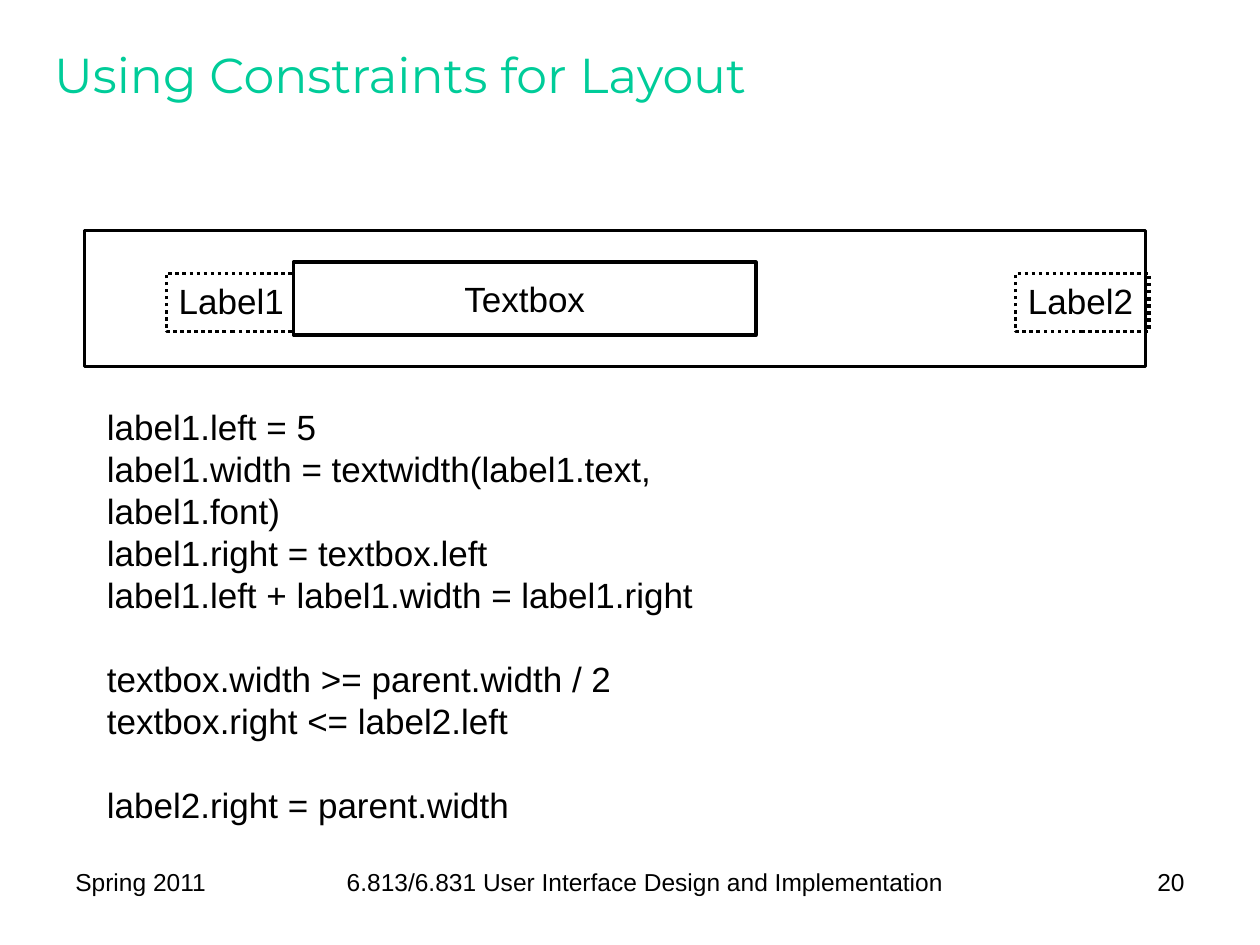
from dataclasses import dataclass

from pptx import Presentation
from pptx.dml.color import RGBColor
from pptx.enum.dml import MSO_LINE
from pptx.enum.shapes import MSO_SHAPE
from pptx.enum.text import MSO_ANCHOR, PP_ALIGN
from pptx.util import Inches, Pt


@dataclass(frozen=True)
class Theme:
    """Colours, fonts and type sizes of the deck."""
    ink: RGBColor = RGBColor(0, 0, 0)
    paper: RGBColor = RGBColor(255, 255, 255)
    accent: RGBColor = RGBColor(0, 204, 153)
    title_font: str = "Montserrat"
    body_font: str = "Arial"
    title_size: int = 28
    body_size: int = 20
    footer_size: int = 14
    leading: float = 1.2
    line_width: int = 2


@dataclass(frozen=True)
class Box:
    """A rectangle in inches."""
    left: float
    top: float
    width: float
    height: float

    def inside(self, x, y, width, height):
        """Return a box offset from this one's top left corner."""
        return Box(self.left + x, self.top + y, width, height)

    def emu(self):
        """Return the four lengths for python-pptx."""
        return [Inches(n) for n in (self.left, self.top, self.width, self.height)]


THEME = Theme()
RULE_GROUPS = [
    ["label1.left = 5",
     "label1.width = textwidth(label1.text, label1.font)",
     "label1.right = textbox.left",
     "label1.left + label1.width = label1.right"],
    ["textbox.width >= parent.width / 2",
     "textbox.right <= label2.left"],
    ["label2.right = parent.width"],
]


def write(para, text, size, align=PP_ALIGN.LEFT):
    """Add one body-font run with the theme's leading."""
    para.alignment = align
    para.line_spacing = Pt(round(size * THEME.leading))
    span = para.add_run()
    span.text = text
    span.font.name = THEME.body_font
    span.font.size = Pt(size)
    span.font.color.rgb = THEME.ink


def add_title(page, box, text):
    """Place and format the title placeholder."""
    title = page.shapes.title
    title.left, title.top, title.width, title.height = box.emu()
    frame = title.text_frame
    frame.vertical_anchor = MSO_ANCHOR.MIDDLE
    para = frame.paragraphs[0]
    para.alignment = PP_ALIGN.LEFT
    span = para.add_run()
    span.text = text
    span.font.name = THEME.title_font
    span.font.size = Pt(THEME.title_size)
    span.font.color.rgb = THEME.accent


def add_widget(page, box, text="", dotted=False, align=PP_ALIGN.LEFT):
    """Draw one outlined widget; dotted ones are see-through."""
    widget = page.shapes.add_shape(MSO_SHAPE.RECTANGLE, *box.emu())
    widget.shadow.inherit = False
    widget.line.color.rgb = THEME.ink
    widget.line.width = Pt(THEME.line_width)
    if dotted:
        widget.fill.background()
        widget.line.dash_style = MSO_LINE.ROUND_DOT
    else:
        widget.fill.solid()
        widget.fill.fore_color.rgb = THEME.paper
    if text:
        frame = widget.text_frame
        frame.word_wrap = False
        frame.vertical_anchor = MSO_ANCHOR.TOP if dotted else MSO_ANCHOR.MIDDLE
        write(frame.paragraphs[0], text, THEME.body_size, align)


def add_layout_diagram(page, box):
    """Draw the parent frame with its two labels and text box."""
    add_widget(page, box)
    add_widget(page, box.inside(0.65, 0.34, 1.06, 0.46), "Label1", dotted=True)
    add_widget(page, box.inside(1.66, 0.25, 3.67, 0.58), "Textbox",
               align=PP_ALIGN.CENTER)
    add_widget(page, box.inside(7.39, 0.34, 1.06, 0.46), "Label2", dotted=True)


def add_rules(page, box, groups):
    """List the constraints, with one line of space between groups."""
    frame = page.shapes.add_textbox(*box.emu()).text_frame
    frame.word_wrap = True
    frame.margin_right = Inches(0.25)
    para = None
    for group in groups:
        for index, rule in enumerate(group):
            first = para is None
            para = frame.paragraphs[0] if first else frame.add_paragraph()
            if index == 0 and not first:
                para.space_before = Pt(THEME.body_size * THEME.leading)
            write(para, rule, THEME.body_size)


def add_footer(page, box):
    """Place the date, course name and page number along one row."""
    parts = [
        (0, 1.5, "Spring 2011", PP_ALIGN.LEFT),
        (1.58, 6.08, "6.813/6.831 User Interface Design and Implementation",
         PP_ALIGN.CENTER),
        (7.75, 1.25, "20", PP_ALIGN.RIGHT),
    ]
    for x, width, text, align in parts:
        part = box.inside(x, 0, width, box.height)
        frame = page.shapes.add_textbox(*part.emu()).text_frame
        frame.word_wrap = True
        write(frame.paragraphs[0], text, THEME.footer_size, align)


def main():
    """Build and save the slide."""
    deck = Presentation()
    deck.slide_width, deck.slide_height = Inches(10), Inches(7.5)
    page = deck.slides.add_slide(deck.slide_layouts.get_by_name("Title Only"))
    add_title(page, Box(0.33, 0.17, 9.25, 0.83), "Using Constraints for Layout")
    add_footer(page, Box(0.5, 6.83, 9, 0.52))
    add_layout_diagram(page, Box(0.67, 1.83, 8.42, 1.08))
    add_rules(page, Box(0.75, 3.17, 5.96, 3.43), RULE_GROUPS)
    deck.save("out.pptx")


if __name__ == "__main__":
    main()
